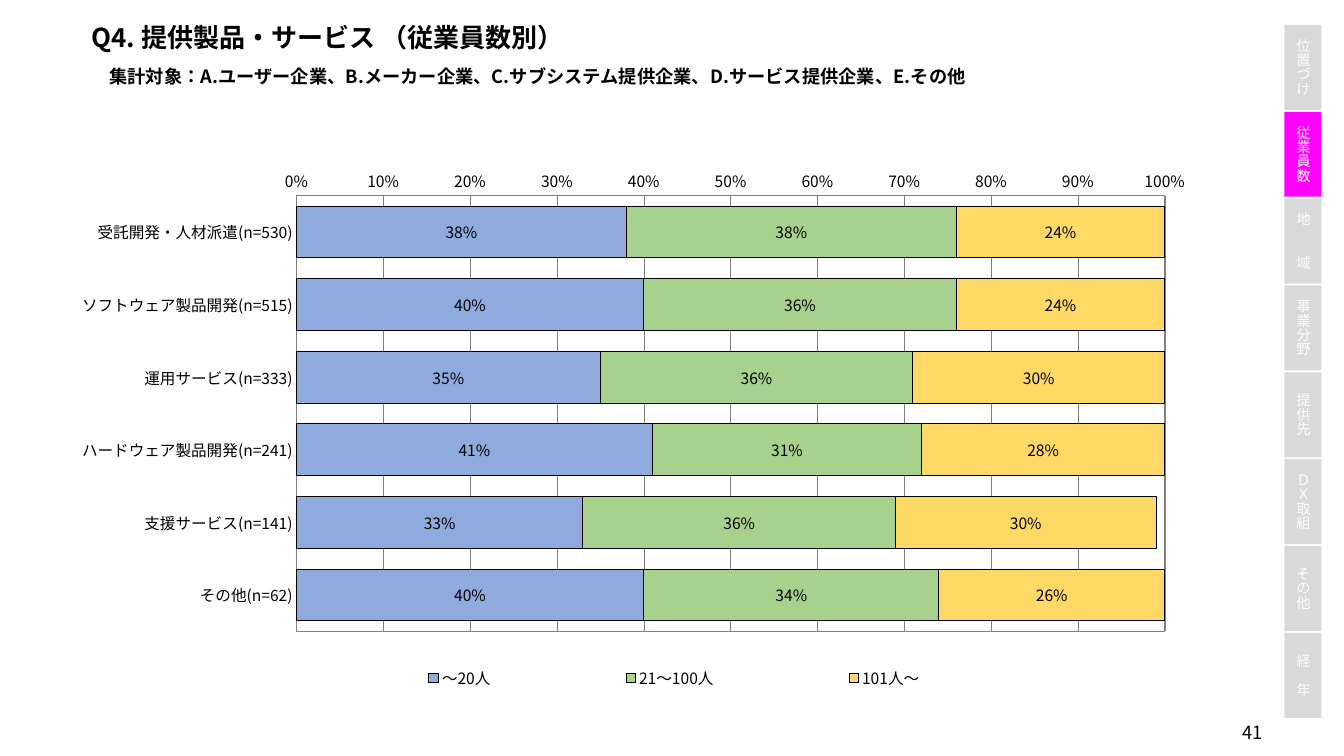
"""Build the slide on products and services by number of employees."""
import dataclasses

import lxml.etree
import pptx
import pptx.chart.data
import pptx.dml.color
import pptx.enum.chart
import pptx.enum.lang
import pptx.enum.shapes
import pptx.enum.text
import pptx.oxml.ns
import pptx.util

TITLE = "Q4. 提供製品・サービス （従業員数別）"
SCOPE = "集計対象：A.ユーザー企業、B.メーカー企業、C.サブシステム提供企業、D.サービス提供企業、E.その他"
PAGE = "41"
TABS = ["位置づけ", "従業員数", "地　　域", "事業分野", "提供先", "ＤＸ取組", "その他", "経　年"]
ACTIVE = "従業員数"
GROUPS = ["受託開発・人材派遣(n=530)", "ソフトウェア製品開発(n=515)", "運用サービス(n=333)",
          "ハードウェア製品開発(n=241)", "支援サービス(n=141)", "その他(n=62)"]
SERIES = [
    ("～20人", "8FAADC", (0.38, 0.40, 0.35, 0.41, 0.33, 0.40)),
    ("21～100人", "A9D18E", (0.38, 0.36, 0.36, 0.31, 0.36, 0.34)),
    ("101人～", "FFD966", (0.24, 0.24, 0.30, 0.28, 0.30, 0.26)),
]


@dataclasses.dataclass(frozen=True)
class Theme:
    font: str = "Noto Sans CJK JP"
    ink: str = "000000"
    paper: str = "FFFFFF"
    grid: str = "808080"
    tab: str = "D9D9D9"
    active: str = "FF00FF"
    title: int = 20
    text: int = 14
    chart: int = 12
    label: int = 11


THEME = Theme()
SCALE = 914400 / 93.7
WIDE, HIGH = pptx.util.Inches(14.35), pptx.util.Inches(8.07)
LEFT, SPAN = 82, 1181
TAB_LEFT, TAB_TOP, TAB_WIDE, TAB_HIGH, TAB_END = 1285, 25, 37, 85, 718
PLOT = (0.188, 0.127, 0.763, 0.73)
LEGEND = (0.19, 0.9, 0.66, 0.07)
MIDDLE = pptx.enum.text.MSO_ANCHOR.MIDDLE
ALIGN = pptx.enum.text.PP_ALIGN
qn = pptx.oxml.ns.qn


def px(size):
    return pptx.util.Emu(round(size * SCALE))


def tint(code):
    return pptx.dml.color.RGBColor.from_string(code)


def style(font, size, code, bold=False):
    font.name, font.size, font.bold = THEME.font, pptx.util.Pt(size), bold
    font.color.rgb = tint(code)


def paint(fill, code):
    fill.solid()
    fill.fore_color.rgb = tint(code)


def stroke(line, code, width):
    line.color.rgb = tint(code)
    line.width = pptx.util.Pt(width)


def place(shape, left, top, width, height):
    shape.left, shape.top, shape.width, shape.height = map(px, (left, top, width, height))


def write(shape, text, size, code, align, bold=False):
    frame = shape.text_frame
    frame.text = text
    frame.word_wrap = True
    frame.auto_size = pptx.enum.text.MSO_AUTO_SIZE.NONE
    frame.vertical_anchor = MIDDLE
    para = frame.paragraphs[0]
    para.alignment = align
    para.space_before = pptx.util.Pt(0)
    font = para.runs[0].font
    style(font, size, code, bold)
    font.language_id = pptx.enum.lang.MSO_LANGUAGE_ID.JAPANESE
    return para


def set_east(root):
    for latin in list(root.iter(qn("a:latin"))):
        east = lxml.etree.Element(qn("a:ea"), typeface=THEME.font)
        latin.addnext(east)


def set_box(part, box, inner=False):
    for old in part.findall(qn("c:layout")):
        part.remove(old)
    layout = lxml.etree.Element(qn("c:layout"))
    manual = lxml.etree.SubElement(layout, qn("c:manualLayout"))
    rules = [("layoutTarget", "inner")] if inner else []
    rules += [("xMode", "edge"), ("yMode", "edge")] + list(zip("xywh", box))
    for name, value in rules:
        lxml.etree.SubElement(manual, qn("c:" + name), val=str(value))
    if inner:
        part.insert(0, layout)
    else:
        part.find(qn("c:legendPos")).addnext(layout)


def add_heads(slide):
    title, scope = slide.shapes.title, slide.placeholders[1]
    place(title, LEFT, 17, SPAN, 41)
    write(title, TITLE, THEME.title, THEME.ink, ALIGN.LEFT, True)
    place(scope, LEFT, 60, SPAN, 32)
    para = write(scope, SCOPE, THEME.text, THEME.ink, ALIGN.LEFT, True)
    props = para._p.get_or_add_pPr()
    props.set("marL", str(px(18)))
    props.set("indent", "0")
    lxml.etree.SubElement(props, qn("a:buNone"))
    page = slide.shapes.add_textbox(px(1221), px(717), px(64), px(31))
    write(page, PAGE, THEME.text, THEME.ink, ALIGN.CENTER)


def add_tabs(slide):
    pitch = (TAB_END - TAB_HIGH - TAB_TOP) / (len(TABS) - 1)
    for row, name in enumerate(TABS):
        tab = slide.shapes.add_shape(
            pptx.enum.shapes.MSO_SHAPE.RECTANGLE,
            px(TAB_LEFT), px(TAB_TOP + row * pitch), px(TAB_WIDE), px(TAB_HIGH))
        tab.shadow.inherit = False
        paint(tab.fill, THEME.active if name == ACTIVE else THEME.tab)
        tab.line.fill.background()
        write(tab, name, THEME.label, THEME.paper, ALIGN.CENTER)
        frame = tab.text_frame
        frame.word_wrap = False
        frame.margin_left = frame.margin_right = 0
        frame.margin_top = frame.margin_bottom = px(11)
        body = tab.element.find(".//" + qn("a:bodyPr"))
        body.set("vert", "eaVert")
        body.set("anchorCtr", "1")


def add_bars(slide):
    kinds = pptx.enum.chart
    data = pptx.chart.data.CategoryChartData(number_format="0%")
    data.categories = GROUPS
    for name, code, values in SERIES:
        data.add_series(name, values)
    chart = slide.shapes.add_chart(
        kinds.XL_CHART_TYPE.BAR_STACKED, px(LEFT), px(120), px(1139), px(597), data).chart
    style(chart.font, THEME.chart, THEME.ink)
    chart.has_title = False
    chart.has_legend = True
    chart.legend.position = kinds.XL_LEGEND_POSITION.BOTTOM
    chart.legend.include_in_layout = False
    style(chart.legend.font, THEME.chart, THEME.ink)

    groups, scale = chart.category_axis, chart.value_axis
    for axis in (groups, scale):
        axis.major_tick_mark = axis.minor_tick_mark = kinds.XL_TICK_MARK.NONE
        style(axis.tick_labels.font, THEME.chart, THEME.ink)
    groups.reverse_order = True
    stroke(groups.format.line, THEME.grid, 1)
    scale.minimum_scale, scale.maximum_scale, scale.major_unit = 0, 1, 0.1
    scale.tick_labels.number_format = "0%"
    scale.tick_labels.number_format_is_linked = False
    scale.format.line.fill.background()
    scale.has_major_gridlines = True
    stroke(scale.major_gridlines.format.line, THEME.grid, 0.25)

    plot = chart.plots[0]
    plot.gap_width, plot.overlap, plot.vary_by_categories = 40, 100, False
    for series, (name, code, values) in zip(plot.series, SERIES):
        paint(series.format.fill, code)
        stroke(series.format.line, THEME.ink, 0.75)
        labels = series.data_labels
        labels.show_value = True
        labels.number_format, labels.number_format_is_linked = "0%", False
        labels.position = kinds.XL_LABEL_POSITION.CENTER
        style(labels.font, THEME.chart, THEME.ink)

    root = chart.element
    area = root.find(".//" + qn("c:plotArea"))
    set_box(area, PLOT, True)
    set_box(root.find(".//" + qn("c:legend")), LEGEND)
    look = lxml.etree.SubElement(area, qn("c:spPr"))
    edge = lxml.etree.SubElement(look, qn("a:ln"), w=str(pptx.util.Pt(1)))
    fill = lxml.etree.SubElement(edge, qn("a:solidFill"))
    lxml.etree.SubElement(fill, qn("a:srgbClr"), val=THEME.grid)
    set_east(root)


def main():
    deck = pptx.Presentation()
    deck.slide_width, deck.slide_height = WIDE, HIGH
    slide = deck.slides.add_slide(deck.slide_layouts[1])
    paint(slide.background.fill, THEME.paper)
    add_tabs(slide)
    add_heads(slide)
    add_bars(slide)
    set_east(slide.element)
    deck.save("out.pptx")


if __name__ == "__main__":
    main()
